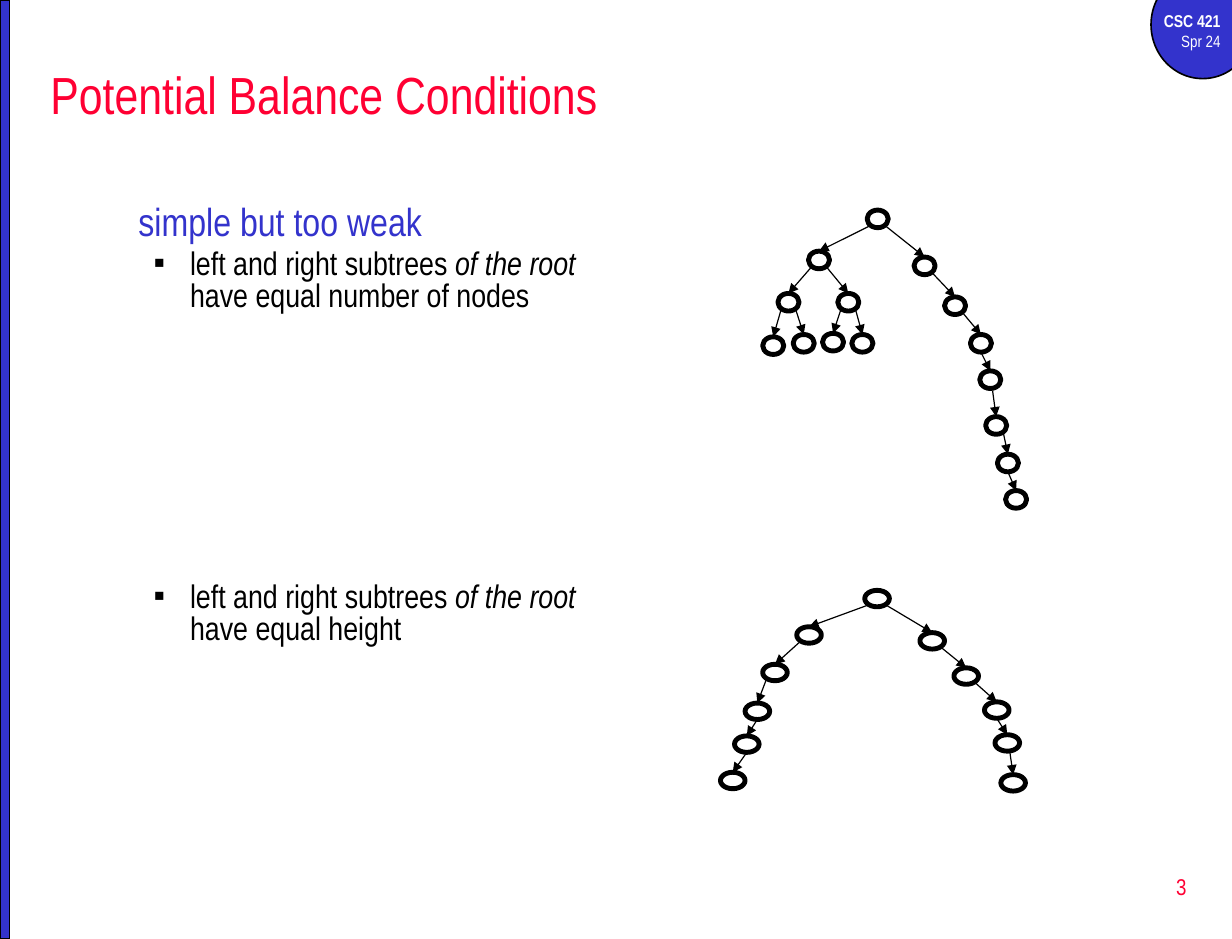
"""Build a slide on weak balance conditions for binary trees."""
from dataclasses import dataclass
from lxml import etree
from pptx import Presentation
from pptx import util as u
from pptx.dml.color import RGBColor
from pptx.enum import shapes, text
from pptx.oxml.ns import qn


@dataclass(frozen=True)
class Theme:
    """Colours, font and type sizes."""
    blue: str = "3333CC"
    red: str = "FF0033"
    black: str = "000000"
    white: str = "FFFFFF"
    font: str = "Arial Narrow"
    title: float = 32
    head: float = 24
    item: float = 20
    page: float = 14
    course: float = 10.5
    term: float = 10


T = Theme()
WIDE, HIGH = 10.5, 8
TITLE = "Potential Balance Conditions"
HEAD = "simple but too weak"
ITEMS = [
    (("left and right subtrees ", "of the root", "\vhave equal number of nodes"), 4),
    (("left and right subtrees ", "of the root ", "have equal height"), 166),
]
BADGE = [("CSC 421", T.course, True), ("Spr 24", T.term, False)]
PAGE = "3"
PORTS = {"left": (0.16, 0.88), "right": (0.83, 0.86), "base": (0.5, 1), "low": (0.61, 1.12)}
TREES = [
    {
        "size": (0.18, 0.15),
        "nodes": {
            "root": (7.39, 1.79),
            "l": (6.89, 2.14), "ll": (6.63, 2.5), "lr": (7.14, 2.5),
            "lll": (6.5, 2.87), "llr": (6.76, 2.85),
            "lrl": (7.01, 2.84), "lrr": (7.26, 2.85),
            "r1": (7.79, 2.19), "r2": (8.05, 2.53), "r3": (8.27, 2.85), "r4": (8.35, 3.16),
            "r5": (8.4, 3.55), "r6": (8.5, 3.87), "r7": (8.57, 4.18),
        },
        "edges": [
            ("root", "l", "left"), ("l", "ll", "left"), ("l", "lr", "right"),
            ("ll", "lll", "left"), ("ll", "llr", "right"),
            ("lr", "lrl", "left"), ("lr", "lrr", "right"),
            ("root", "r1", "right"), ("r1", "r2", "right"), ("r2", "r3", "right"),
            ("r3", "r4", "base"), ("r4", "r5", "low"), ("r5", "r6", "right"), ("r6", "r7", "base"),
        ],
    },
    {
        "size": (0.21, 0.14),
        "nodes": {
            "root": (7.37, 5.03),
            "l1": (6.79, 5.34), "l2": (6.5, 5.66), "l3": (6.35, 5.99),
            "l4": (6.26, 6.27), "l5": (6.14, 6.58),
            "r1": (7.84, 5.39), "r2": (8.13, 5.69), "r3": (8.39, 5.98),
            "r4": (8.48, 6.26), "r5": (8.53, 6.6),
        },
        "edges": [
            ("root", "l1", "left"), ("l1", "l2", "left"), ("l2", "l3", "left"),
            ("l3", "l4", "base"), ("l4", "l5", "base"),
            ("root", "r1", "right"), ("r1", "r2", "right"), ("r2", "r3", "right"),
            ("r3", "r4", "base"), ("r4", "r5", "low"),
        ],
    },
]


def inch(*vals):
    return [u.Inches(v) for v in vals]


def style(para, size, color, bold=False):
    font = para.font
    font.name, font.size, font.bold = T.font, u.Pt(size), bold
    font.color.rgb = RGBColor.from_string(color)


def place(shape, *box):
    shape.left, shape.top, shape.width, shape.height = inch(*box)


def draw(pool, kind, box, fill=None, line=1):
    shape = pool.add_shape(kind, *inch(*box))
    shape.shadow.inherit = False
    if fill:
        shape.fill.solid()
        shape.fill.fore_color.rgb = RGBColor.from_string(fill)
    else:
        shape.fill.background()
    shape.line.color.rgb = RGBColor.from_string(T.black)
    shape.line.width = u.Pt(line)


def arrow(pool, start, end):
    link = pool.add_connector(shapes.MSO_CONNECTOR.STRAIGHT, *inch(*start, *end))
    link.line.color.rgb = RGBColor.from_string(T.black)
    link.line.width = u.Pt(0.75)
    etree.SubElement(link.line._get_or_add_ln(), qn("a:tailEnd"), type="triangle")
    etree.SubElement(link._element.spPr, qn("a:effectLst"))


def label(slide, box, rows, color, anchor):
    frame = slide.shapes.add_textbox(*inch(*box)).text_frame
    frame.word_wrap, frame.vertical_anchor = True, anchor
    for k, (words, size, bold) in enumerate(rows):
        para = frame.add_paragraph() if k else frame.paragraphs[0]
        para.text, para.alignment = words, text.PP_ALIGN.RIGHT
        style(para, size, color, bold)


def indent(para, left, hang, mark=None):
    props = para._p.get_or_add_pPr()
    props.set("marL", str(u.Inches(left)))
    props.set("indent", str(u.Inches(hang)))
    if mark:
        etree.SubElement(props, qn("a:buFont"), typeface="Arial")
        etree.SubElement(props, qn("a:buChar"), char=mark)
    else:
        etree.SubElement(props, qn("a:buNone"))


def write(slide):
    title, body = slide.placeholders
    place(title, 0.33, 0.42, 9.92, 0.75)
    place(body, 1.08, 1.63, 4.01, 4.65)
    for frame in (title.text_frame, body.text_frame):
        frame.auto_size, frame.word_wrap = text.MSO_AUTO_SIZE.NONE, True
    title.text_frame.vertical_anchor = text.MSO_ANCHOR.MIDDLE
    title.text = TITLE
    para = title.text_frame.paragraphs[0]
    para.alignment = text.PP_ALIGN.LEFT
    style(para, T.title, T.red)
    body.text = HEAD
    para = body.text_frame.paragraphs[0]
    para.space_before = u.Pt(T.head / 5)
    indent(para, 0, 0)
    style(para, T.head, T.blue)
    for parts, gap in ITEMS:
        para = body.text_frame.add_paragraph()
        para.level, para.line_spacing, para.space_before = 1, 0.8, u.Pt(gap)
        indent(para, 0.44, -0.31, "▪")
        for k, words in enumerate(parts):
            if words.startswith("\v"):
                para.add_line_break()
            run = para.add_run()
            run.text = words.strip("\v")
            run.font.italic = k == 1
        style(para, T.item, T.black)


def plant(slide, tree):
    pool = slide.shapes.add_group_shape().shapes
    wide, high = tree["size"]
    nodes = tree["nodes"]
    for spot in nodes.values():
        draw(pool, shapes.MSO_SHAPE.OVAL, (*spot, wide, high), line=3)
    for top, low, port in tree["edges"]:
        (x, y), (dx, dy) = nodes[top], PORTS[port]
        left, head = nodes[low]
        arrow(pool, (x + dx * wide, y + dy * high), (left + wide / 2, head))


def main():
    deck = Presentation()
    deck.slide_width, deck.slide_height = inch(WIDE, HIGH)
    slide = deck.slides.add_slide(deck.slide_layouts[1])
    draw(slide.shapes, shapes.MSO_SHAPE.OVAL, (9.81, -0.25, 0.88, 0.92), T.blue)
    label(slide, (9.67, 0.04, 0.83, 0.46), BADGE, T.white, text.MSO_ANCHOR.TOP)
    draw(slide.shapes, shapes.MSO_SHAPE.RECTANGLE, (0, 0, 0.08, HIGH), T.blue)
    write(slide)
    for tree in TREES:
        plant(slide, tree)
    label(slide, (8.02, 7.29, 2.19, 0.53), [(PAGE, T.page, False)], T.red, text.MSO_ANCHOR.MIDDLE)
    deck.save("out.pptx")


if __name__ == "__main__":
    main()
